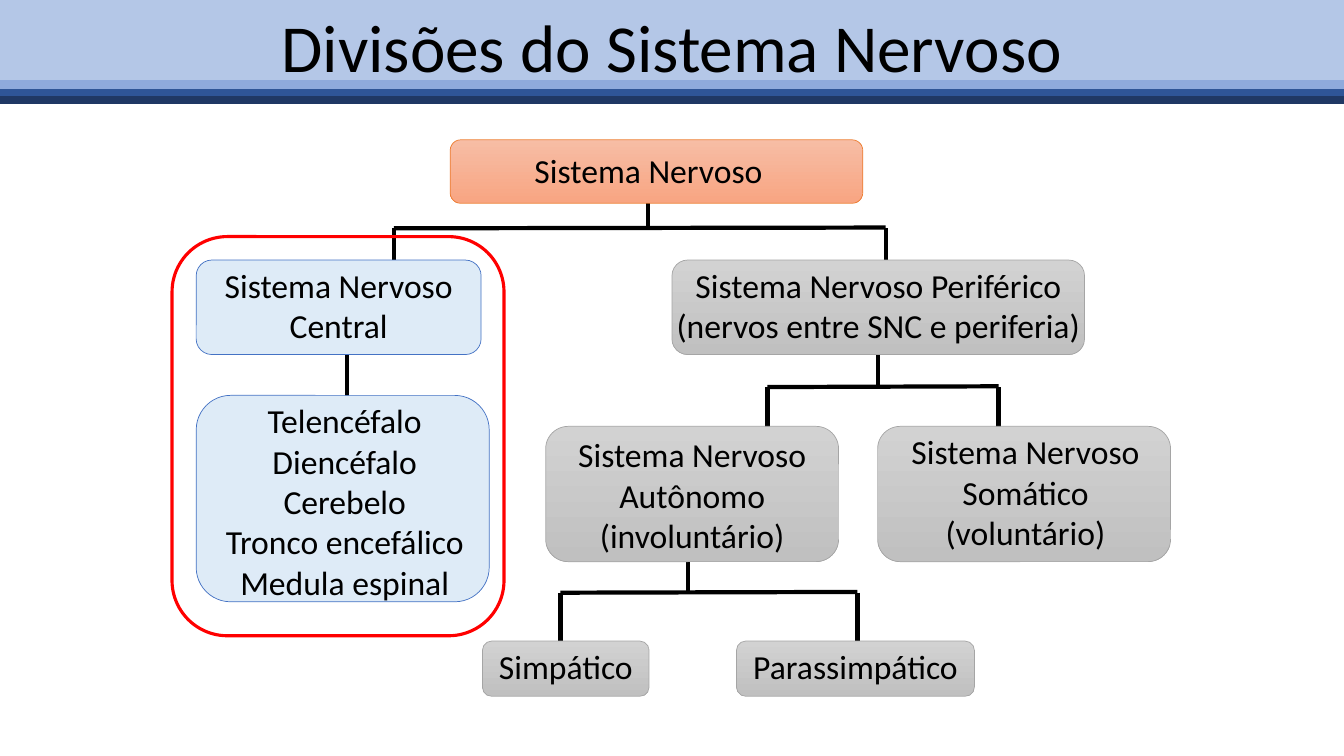
"""Build a slide with the divisions of the nervous system as a tree."""
from lxml import etree
from pptx import Presentation
from pptx.dml.color import RGBColor
from pptx.enum.shapes import MSO_CONNECTOR, MSO_SHAPE
from pptx.enum.text import MSO_AUTO_SIZE, PP_ALIGN
from pptx.oxml.ns import qn
from pptx.util import Inches, Pt

WIDTH, HEIGHT = Inches(13.33), Inches(7.5)
BLACK = RGBColor(0x00, 0x00, 0x00)
RED = RGBColor(0xFF, 0x00, 0x00)
HEADER = RGBColor(0xB4, 0xC7, 0xE7)
STRIPES = [
    (11.2, RGBColor(0x8F, 0xAA, 0xDC)),
    (12.3, RGBColor(0x2F, 0x55, 0x97)),
    (13.2, RGBColor(0x20, 0x38, 0x64)),
]
ORANGE = ([RGBColor(0xF7, 0xBD, 0xA5), RGBColor(0xF8, 0xA5, 0x82)],
          RGBColor(0xED, 0x7D, 0x31))
GRAY = ([RGBColor(0xD2, 0xD2, 0xD2), RGBColor(0xC0, 0xC0, 0xC0)],
        RGBColor(0xA5, 0xA5, 0xA5))
BLUE = ([RGBColor(0xDE, 0xEB, 0xF7)], RGBColor(0x44, 0x72, 0xC4))

NODES = [
    (ORANGE, (33.5, 18.5, 30.7, 8.4), (31.1, 19.2, 34.3, 6.7),
     ["Sistema Nervoso"]),
    (BLUE, (14.6, 34.4, 21.2, 12.5), (14.6, 34.4, 21.2, 12.1),
     ["Sistema Nervoso Central"]),
    (BLUE, (14.6, 52.3, 21.8, 27.3), (14.2, 52.3, 22.9, 28.3),
     ["Telencéfalo", "Diencéfalo", "Cerebelo", "Tronco encefálico",
      "Medula espinal"]),
    (GRAY, (50, 34.4, 30.7, 12.5), (48.2, 34.4, 34.3, 12.1),
     ["Sistema Nervoso Periférico", "(nervos entre SNC e periferia)"]),
    (GRAY, (40.6, 56.4, 21.8, 17.9), (40, 56.8, 23, 17.5),
     ["Sistema Nervoso Autônomo", "(involuntário)"]),
    (GRAY, (65.3, 56.4, 21.8, 17.9), (64.8, 56.4, 23, 17.5),
     ["Sistema Nervoso Somático", "(voluntário)"]),
    (GRAY, (35.9, 84.8, 12.4, 7.3), (35.3, 84.8, 13.6, 6.7), ["Simpático"]),
    (GRAY, (54.8, 84.8, 17.7, 7.3), (54.8, 84.8, 17.7, 6.7),
     ["Parassimpático"]),
]
BRANCHES = [
    (48.2, 21.7, 30.2, 29.3, 65.9),
    (65.3, 40.7, 51.2, 57.1, 74.3),
    (51.2, 68, 78.4, 41.7, 63.8),
]
DROP = 10.5


def place(x, y):
    """Turn percentages of the slide into a position or a size."""
    return round(WIDTH * x / 100), round(HEIGHT * y / 100)


def add_line(s, start, end, color=BLACK, weight=3):
    """Draw a straight line without a shadow."""
    line = s.shapes.add_connector(MSO_CONNECTOR.STRAIGHT,
                                  *place(*start), *place(*end))
    line.line.color.rgb = color
    line.line.width = Pt(weight)
    etree.SubElement(line._element.spPr, qn("a:effectLst"))


def add_box(s, kind, area, fills=(), outline=None, weight=0.5):
    """Draw a shape with no fill, a plain fill or a vertical gradient."""
    sp = s.shapes.add_shape(kind, *place(*area[:2]), *place(*area[2:]))
    sp.shadow.inherit = False
    if len(fills) == 2:
        sp.fill.gradient()
        sp.fill.gradient_angle = 270
        for stop, color in zip(sp.fill.gradient_stops, fills):
            stop.color.rgb = color
    elif fills:
        sp.fill.solid()
        sp.fill.fore_color.rgb = fills[0]
    else:
        sp.fill.background()
    if outline is None:
        sp.line.fill.background()
    else:
        sp.line.color.rgb = outline
        sp.line.width = Pt(weight)


def add_text(s, area, texts, size=24):
    """Write centred paragraphs in a wrapping text box."""
    tf = s.shapes.add_textbox(*place(*area[:2]), *place(*area[2:])).text_frame
    tf.word_wrap = True
    tf.auto_size = MSO_AUTO_SIZE.SHAPE_TO_FIT_TEXT
    tf.text = "\n".join(texts)
    for p in tf.paragraphs:
        p.alignment = PP_ALIGN.CENTER
        p.font.name = "Calibri"
        p.font.size = Pt(size)
        p.font.color.rgb = BLACK


def add_branch(s, stem, top, bar, left, right):
    """Join a parent to its two children with a stem, a bar and two drops."""
    add_line(s, (stem, top), (stem, bar))
    add_line(s, (right, bar - 0.1), (left, bar))
    for x in (left, right):
        add_line(s, (x, bar), (x, bar + DROP))


def add_header(s):
    """Draw the title band with its stripes."""
    add_box(s, MSO_SHAPE.RECTANGLE, (0, 0, 100, 11.2), [HEADER])
    for y, color in STRIPES:
        add_line(s, (0, y), (100, y), color, 6)
    add_text(s, (0, 0, 100, 12.1), ["Divisões do Sistema Nervoso"], 48)


def main():
    """Build and save the slide."""
    prs = Presentation()
    prs.slide_width, prs.slide_height = WIDTH, HEIGHT
    s = prs.slides.add_slide(prs.slide_layouts[6])
    for branch in BRANCHES:
        add_branch(s, *branch)
    add_line(s, (25.8, 42.8), (25.8, 53.2))
    for (fills, outline), box, text_area, texts in NODES:
        add_box(s, MSO_SHAPE.ROUNDED_RECTANGLE, box, fills, outline)
        add_text(s, text_area, texts)
    add_header(s)
    add_box(s, MSO_SHAPE.ROUNDED_RECTANGLE, (12.8, 31.3, 24.7, 52.8),
            outline=RED, weight=2.25)
    prs.save("out.pptx")


if __name__ == "__main__":
    main()
